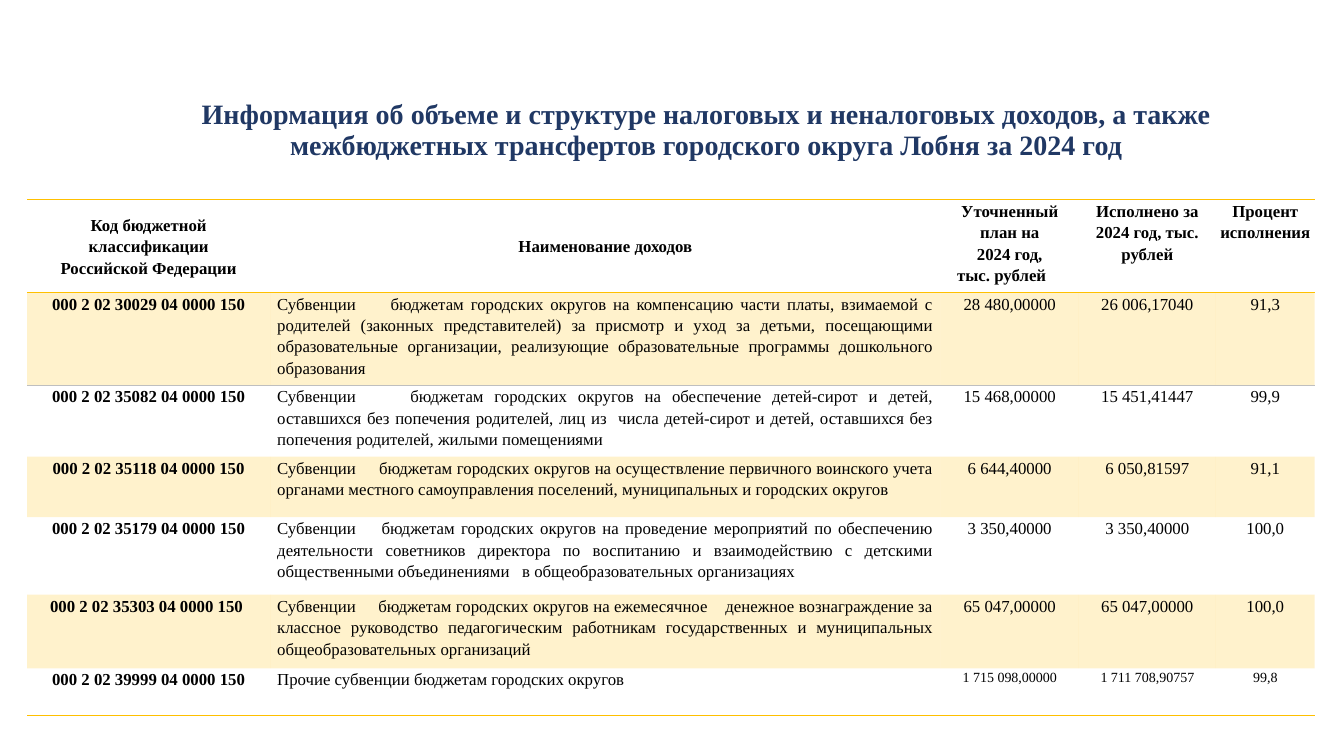
from lxml import etree
from pptx import Presentation
from pptx.dml.color import RGBColor
from pptx.enum.text import MSO_ANCHOR, PP_ALIGN
from pptx.oxml.ns import qn
from pptx.util import Inches, Pt

CENTER, JUSTIFY = PP_ALIGN.CENTER, PP_ALIGN.JUSTIFY
MIDDLE, TOP = MSO_ANCHOR.MIDDLE, MSO_ANCHOR.TOP
NAVY = RGBColor(0x20, 0x38, 0x64)
BLACK = RGBColor(0x00, 0x00, 0x00)
GOLD = RGBColor(0xFF, 0xC0, 0x00)
GREY = RGBColor(0xBF, 0xBF, 0xBF)
FONT = "Times New Roman"
PLAIN_TABLE_STYLE = "{2D5ABB26-0587-4C30-8999-92F81FD0307C}"

TITLE = ("Информация об объеме и структуре налоговых и неналоговых доходов, "
         "а также межбюджетных трансфертов городского округа Лобня за 2024 год")
HEADERS = [
    "Код бюджетной классификации\nРоссийской Федерации",
    "Наименование доходов",
    "Уточненный план на\n2024 год,\nтыс. рублей",
    "Исполнено за 2024 год, тыс. рублей",
    "Процент исполнения",
]
INCOMES = [
    ("000 2 02 30029 04 0000 150",
     "Субвенции     бюджетам городских округов на компенсацию части платы, взимаемой с "
     "родителей (законных представителей) за присмотр и уход за детьми, посещающими "
     "образовательные организации, реализующие образовательные программы дошкольного "
     "образования",
     "28 480,00000", "26 006,17040", "91,3"),
    ("000 2 02 35082 04 0000 150",
     "Субвенции     бюджетам городских округов на обеспечение детей-сирот и детей, "
     "оставшихся без попечения родителей, лиц из  числа детей-сирот и детей, "
     "оставшихся без попечения родителей, жилыми помещениями",
     "15 468,00000", "15 451,41447", "99,9"),
    ("000 2 02 35118 04 0000 150",
     "Субвенции     бюджетам городских округов на осуществление первичного воинского "
     "учета органами местного самоуправления поселений, муниципальных и городских округов",
     "6 644,40000", "6 050,81597", "91,1"),
    ("000 2 02 35179 04 0000 150",
     "Субвенции    бюджетам городских округов на проведение мероприятий по обеспечению "
     "деятельности советников директора по воспитанию и взаимодействию с детскими "
     "общественными объединениями   в общеобразовательных организациях",
     "3 350,40000", "3 350,40000", "100,0"),
    ("000 2 02 35303 04 0000 150 ",
     "Субвенции     бюджетам городских округов на ежемесячное    денежное вознаграждение "
     "за классное руководство педагогическим работникам государственных и муниципальных "
     "общеобразовательных организаций",
     "65 047,00000", "65 047,00000", "100,0"),
    ("000 2 02 39999 04 0000 150",
     "Прочие субвенции бюджетам городских округов",
     "1 715 098,00000", "1 711 708,90757", "99,8"),
]
COLUMN_WIDTHS = [2.41, 6.65, 1.37, 1.36, 0.98]
ROW_HEIGHTS = [0.89, 0.86, 0.71, 0.6, 0.77, 0.73, 0.47]


def style_paragraph(para, size, color, bold, align, spacing):
    para.alignment = align
    para.line_spacing = spacing
    para.font.name = FONT
    para.font.size = Pt(size)
    para.font.bold = bold
    para.font.color.rgb = color


def add_border(cell, side, color, width):
    line = etree.Element(qn("a:" + side), w=str(Pt(width)))
    fill = etree.SubElement(line, qn("a:solidFill"))
    etree.SubElement(fill, qn("a:srgbClr"), val=str(color))
    properties = cell._tc.get_or_add_tcPr()
    position = len(properties.findall(qn("a:lnT")))
    properties.insert(position, line)


deck = Presentation()
deck.slide_width = Inches(13.33)
deck.slide_height = Inches(7.5)
page = deck.slides.add_slide(deck.slide_layouts[6])

title_box = page.shapes.add_textbox(Inches(1.65), Inches(0.85), Inches(10.71), Inches(0.9))
title_frame = title_box.text_frame
title_frame.word_wrap = True
title_frame.vertical_anchor = MIDDLE
title_frame.text = TITLE
style_paragraph(title_frame.paragraphs[0], 20, NAVY, True, CENTER, 0.9)

rows = [HEADERS, *INCOMES]
last_row = len(rows) - 1
frame = page.shapes.add_table(len(rows), len(HEADERS), Inches(0.27), Inches(1.98),
                              Inches(sum(COLUMN_WIDTHS)), Inches(sum(ROW_HEIGHTS)))
table = frame.table
table.first_row = False
table.horz_banding = False
table._tbl.tblPr.find(qn("a:tableStyleId")).text = PLAIN_TABLE_STYLE
for column, width in zip(table.columns, COLUMN_WIDTHS):
    column.width = Inches(width)
for row, height in zip(table.rows, ROW_HEIGHTS):
    row.height = Inches(height)

for r, texts in enumerate(rows):
    for c, text in enumerate(texts):
        cell = table.cell(r, c)
        cell.text = text
        cell.margin_left = cell.margin_right = Inches(0.07 if r else 0.04)
        cell.margin_top = cell.margin_bottom = 0
        cell.vertical_anchor = MIDDLE if r == 0 and c < 2 else TOP
        size = 10 if r == last_row and c > 1 else 12
        align = JUSTIFY if r and c == 1 else CENTER
        for para in cell.text_frame.paragraphs:
            style_paragraph(para, size, BLACK, r == 0 or c == 0, align, 1.15)
        if r % 2:
            cell.fill.solid()
            cell.fill.fore_color.rgb = GOLD
            tint = cell._tc.tcPr.find(".//" + qn("a:srgbClr"))
            etree.SubElement(tint, qn("a:alpha"), val="20000")
        else:
            cell.fill.background()
        if r == 0:
            add_border(cell, "lnT", GOLD, 1)
        if r == 1:
            add_border(cell, "lnT", GREY, 0.5)
        if r in (0, last_row):
            add_border(cell, "lnB", GOLD, 1)

unit_para = table.cell(0, 2).text_frame.paragraphs[-1]
unit_para._p.get_or_add_pPr().set("marR", str(Inches(0.16)))

deck.save("out.pptx")
